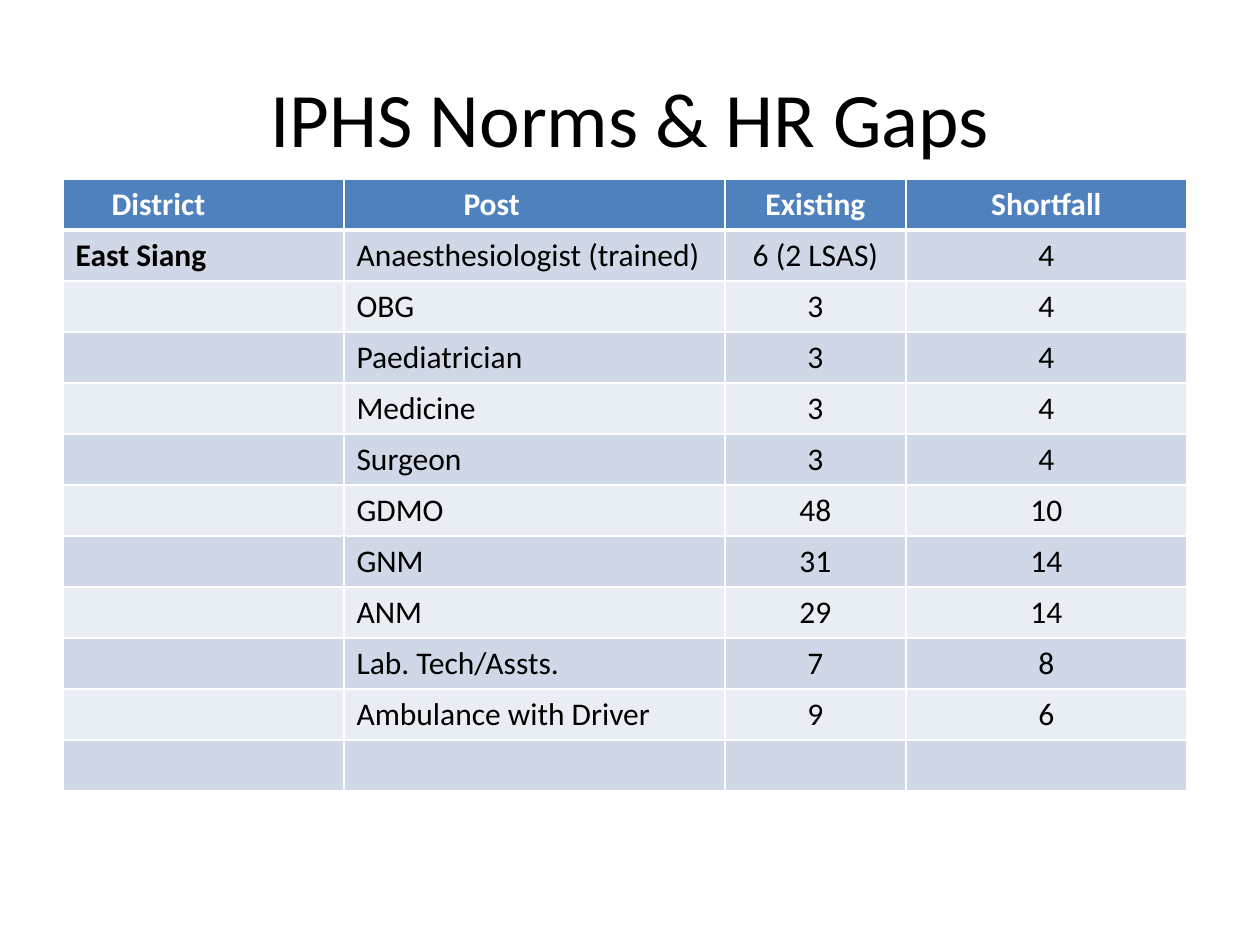
from dataclasses import dataclass

from lxml import etree
from pptx import Presentation
from pptx.dml.color import RGBColor
from pptx.enum.text import MSO_ANCHOR, PP_ALIGN
from pptx.oxml.ns import qn
from pptx.util import Emu, Pt

LEFT, CENTER = PP_ALIGN.LEFT, PP_ALIGN.CENTER
MIDDLE = MSO_ANCHOR.MIDDLE
PX_PER_INCH = 126
EMU_PER_INCH = 914400


@dataclass(frozen=True)
class Theme:
    font: str = "Calibri"
    title_size: int = 44
    table_size: int = 18
    text: str = "000000"
    header_text: str = "FFFFFF"
    header_fill: str = "4F81BD"
    band_fills: tuple[str, str] = ("D0D8E8", "E9EDF4")
    border: str = "FFFFFF"
    border_width: int = 1
    header_rule_width: int = 3


@dataclass(frozen=True)
class Column:
    heading: str
    width: int
    align: PP_ALIGN
    heading_indent: int = 0


@dataclass(frozen=True)
class Staffing:
    district: str = ""
    post: str = ""
    existing: str = ""
    shortfall: str = ""

    def values(self) -> tuple[str, ...]:
        return self.district, self.post, self.existing, self.shortfall


THEME = Theme()
TABLE_LEFT, TABLE_TOP, ROW_HEIGHT = 63, 179, 51
COLUMNS = [
    Column("District", 281, LEFT, 36),
    Column("Post", 381, LEFT, 107),
    Column("Existing", 181, CENTER),
    Column("Shortfall", 281, CENTER),
]
STAFFING = [
    Staffing("East Siang", "Anaesthesiologist (trained)", "6 (2 LSAS)", "4"),
    Staffing("", "OBG", "3", "4"),
    Staffing("", "Paediatrician", "3", "4"),
    Staffing("", "Medicine", "3", "4"),
    Staffing("", "Surgeon", "3", "4"),
    Staffing("", "GDMO", "48", "10"),
    Staffing("", "GNM", "31", "14"),
    Staffing("", "ANM", "29", "14"),
    Staffing("", "Lab. Tech/Assts.", "7", "8"),
    Staffing("", "Ambulance with Driver", "9", "6"),
    Staffing(),
]


def px(length: int) -> Emu:
    return Emu(round(length * EMU_PER_INCH / PX_PER_INCH))


def write(paragraph, text: str, size: int, color: str, align: PP_ALIGN, bold: bool = False) -> None:
    paragraph.text = text
    paragraph.alignment = align
    font = paragraph.font
    font.name, font.size, font.bold = THEME.font, Pt(size), bold
    font.color.rgb = RGBColor.from_string(color)


def set_borders(cell, bottom_width: int) -> None:
    properties = cell._tc.get_or_add_tcPr()
    for side in ("lnL", "lnR", "lnT", "lnB"):
        width = bottom_width if side == "lnB" else THEME.border_width
        line = etree.SubElement(properties, qn(f"a:{side}"), w=str(Pt(width)))
        fill = etree.SubElement(line, qn("a:solidFill"))
        etree.SubElement(fill, qn("a:srgbClr"), val=THEME.border)


def fill_cell(cell, text: str, fill: str, color: str, align: PP_ALIGN,
              bold: bool, bottom_width: int = THEME.border_width) -> None:
    set_borders(cell, bottom_width)
    cell.fill.solid()
    cell.fill.fore_color.rgb = RGBColor.from_string(fill)
    write(cell.text_frame.paragraphs[0], text, THEME.table_size, color, align, bold)


def add_title(slide, text: str) -> None:
    frame = slide.shapes.add_textbox(px(63), px(38), px(1134), px(158)).text_frame
    frame.word_wrap = True
    frame.vertical_anchor = MIDDLE
    write(frame.paragraphs[0], text, THEME.title_size, THEME.text, CENTER)


def add_staffing_table(slide) -> None:
    row_count = len(STAFFING) + 1
    table = slide.shapes.add_table(
        row_count, len(COLUMNS), px(TABLE_LEFT), px(TABLE_TOP),
        px(sum(column.width for column in COLUMNS)), px(row_count * ROW_HEIGHT),
    ).table
    table.horz_banding = False
    for row in table.rows:
        row.height = px(ROW_HEIGHT)

    # Header row
    for index, column in enumerate(COLUMNS):
        table.columns[index].width = px(column.width)
        cell = table.cell(0, index)
        fill_cell(cell, column.heading, THEME.header_fill, THEME.header_text,
                  column.align, True, THEME.header_rule_width)
        if column.heading_indent:
            cell.margin_left = px(column.heading_indent) + cell.margin_left

    # Banded body rows, with the district in bold
    for row_index, staffing in enumerate(STAFFING):
        band = THEME.band_fills[row_index % 2]
        for index, (column, value) in enumerate(zip(COLUMNS, staffing.values())):
            fill_cell(table.cell(row_index + 1, index), value, band, THEME.text,
                      column.align, bold=index == 0)


def main() -> None:
    presentation = Presentation()
    presentation.slide_width, presentation.slide_height = px(1260), px(945)
    slide = presentation.slides.add_slide(presentation.slide_layouts[6])
    add_title(slide, "IPHS Norms & HR Gaps")
    add_staffing_table(slide)
    presentation.save("out.pptx")


if __name__ == "__main__":
    main()
